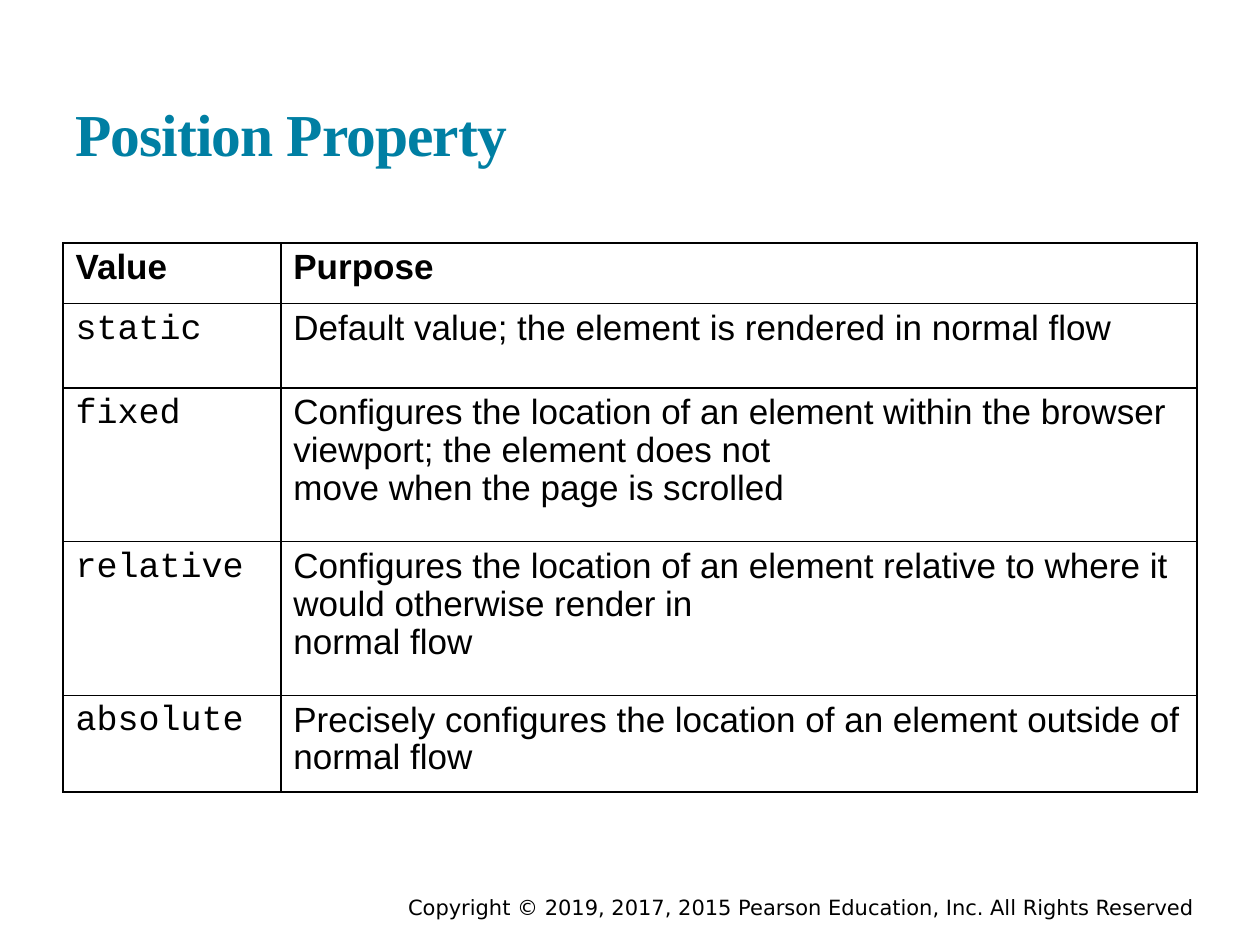
from pptx import Presentation
from pptx.dml.color import RGBColor
from pptx.enum.text import MSO_ANCHOR as Anchor, PP_ALIGN as Align
from pptx.oxml import parse_xml
from pptx.oxml.ns import nsdecls
from pptx.util import Cm, Pt

COLORS = {"title": "007FA3", "text": "000000", "border": "000000"}

TITLE_FORMAT = {"name": "Times New Roman", "size": Pt(34), "bold": True}
HEAD_FORMAT = {"name": "Arial", "size": Pt(20), "bold": True}
VALUE_FORMAT = {"name": "Courier New", "size": Pt(20), "bold": False}
PURPOSE_FORMAT = {"name": "Arial", "size": Pt(20), "bold": False}
FOOTER_FORMAT = {"name": "DejaVu Sans", "size": Pt(12), "bold": False}

COLUMN_WIDTHS = [4.39, 18.47]
ROW_HEIGHTS = [1.22, 1.7, 3.1, 3.1, 1.95]
ROWS = [
    ("Value", ["Purpose"]),
    ("static", ["Default value; the element is rendered in normal flow"]),
    ("fixed", ["Configures the location of an element within the browser "
               "viewport; the element does not",
               "move when the page is scrolled"]),
    ("relative", ["Configures the location of an element relative to where it "
                  "would otherwise render in",
                  "normal flow"]),
    ("absolute", ["Precisely configures the location of an element outside of "
                  "normal flow"]),
]


def write_span(para, text, formats, color):
    span = para.add_run()
    span.text = text
    for name, value in formats.items():
        setattr(span.font, name, value)
    span.font.color.rgb = RGBColor.from_string(color)
    return span


def add_title(page, text):
    box = page.shapes.title
    box.left, box.top, box.width, box.height = Cm(1.27), Cm(1.68), Cm(22.86), Cm(1.96)
    frame = box.text_frame
    frame.word_wrap = True
    frame.vertical_anchor = Anchor.BOTTOM
    for side in ("left", "top", "right", "bottom"):
        setattr(frame, f"margin_{side}", Cm(0.25))
    para = frame.paragraphs[0]
    para.alignment = Align.LEFT
    span = write_span(para, text, TITLE_FORMAT, COLORS["title"])
    span.font._element.set("spc", "-50")  # letter spacing of -0.5 pt


def add_borders(cell):
    properties = cell._tc.get_or_add_tcPr()
    for index, side in enumerate(("lnL", "lnR", "lnT", "lnB")):
        properties.insert(index, parse_xml(
            f'<a:{side} {nsdecls("a")} w="{Pt(1)}"><a:solidFill>'
            f'<a:srgbClr val="{COLORS["border"]}"/></a:solidFill></a:{side}>'))


def fill_cell(cell, lines, formats):
    cell.fill.background()
    add_borders(cell)
    frame = cell.text_frame
    for index, line in enumerate(lines):
        para = frame.add_paragraph() if index else frame.paragraphs[0]
        para.line_spacing = 0.97
        write_span(para, line, formats, COLORS["text"])


def add_value_table(page):
    table = page.shapes.add_table(
        len(ROWS), len(COLUMN_WIDTHS), Cm(1.27), Cm(4.9),
        Cm(sum(COLUMN_WIDTHS)), Cm(sum(ROW_HEIGHTS))).table
    table.horz_banding = False
    for column, width in zip(table.columns, COLUMN_WIDTHS):
        column.width = Cm(width)
    for row, height in zip(table.rows, ROW_HEIGHTS):
        row.height = Cm(height)
    for index, (value, purpose) in enumerate(ROWS):
        fill_cell(table.cell(index, 0), [value], VALUE_FORMAT if index else HEAD_FORMAT)
        fill_cell(table.cell(index, 1), purpose, PURPOSE_FORMAT if index else HEAD_FORMAT)


def add_footer(page, text):
    box = page.shapes.add_textbox(Cm(7.54), Cm(17.96), Cm(16.79), Cm(0.64))
    frame = box.text_frame
    frame.word_wrap = True
    frame.vertical_anchor = Anchor.MIDDLE
    para = frame.paragraphs[0]
    para.alignment = Align.RIGHT
    write_span(para, text, FOOTER_FORMAT, COLORS["text"])


def main():
    deck = Presentation()
    deck.slide_width, deck.slide_height = Cm(25.4), Cm(19.05)
    page = deck.slides.add_slide(deck.slide_layouts[5])  # title only

    # Copyright line, heading and table of values
    add_footer(page, "Copyright © 2019, 2017, 2015 Pearson Education, Inc. All Rights Reserved")
    add_title(page, "Position Property")
    add_value_table(page)

    deck.save("out.pptx")


if __name__ == "__main__":
    main()
